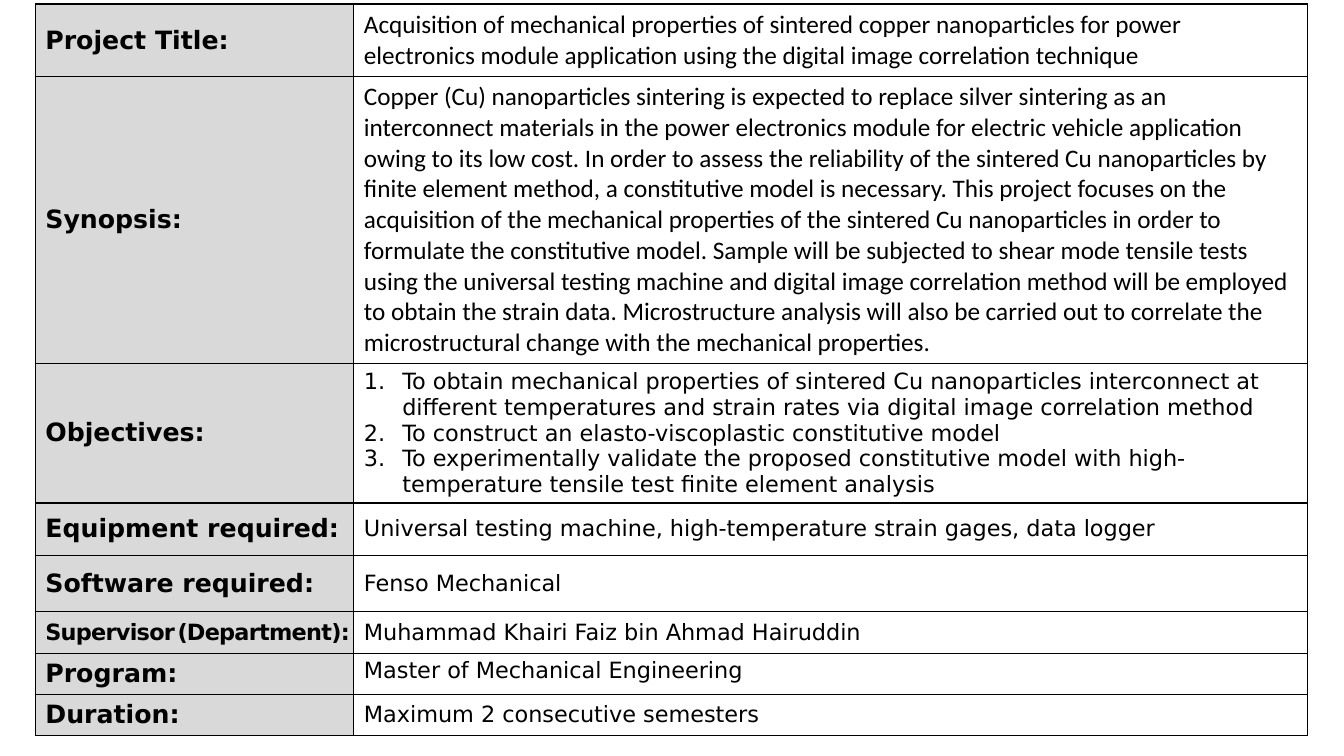
"""Builds a one-slide project proposal sheet as a two-column table."""
from lxml.etree import SubElement as Sub
from pptx import Presentation
from pptx.dml.color import RGBColor as Color
from pptx.enum.text import MSO_ANCHOR as Anchor
from pptx.oxml import parse_xml
from pptx.oxml.ns import nsdecls, qn
from pptx.util import Pt

PX = 9144
THEME = {
    "ink": Color.from_string("000000"), "label": Color.from_string("D9D9D9"),
    "sans": "DejaVu Sans", "body": "Calibri",
    "big": Pt(18), "small": Pt(16), "gap": Pt(5), "edge": Pt(1),
}
LABEL = ("sans", "big", True)
PROSE = ("body", "big", False)
NOTE = ("sans", "small", False)

ROWS = [
    (72, "Project Title:", PROSE, [
        "Acquisition of mechanical properties of sintered copper nanoparticles for power "
        "electronics module application using the digital image correlation technique"]),
    (284, "Synopsis:", PROSE, [
        "Copper (Cu) nanoparticles sintering is expected to replace silver sintering as an "
        "interconnect materials in the power electronics module for electric vehicle application "
        "owing to its low cost. In order to assess the reliability of the sintered Cu nanoparticles by "
        "finite element method, a constitutive model is necessary. This project focuses on the "
        "acquisition of the mechanical properties of the sintered Cu nanoparticles in order to "
        "formulate the constitutive model. Sample will be subjected to shear mode tensile tests "
        "using the universal testing machine and digital image correlation method will be employed "
        "to obtain the strain data. Microstructure analysis will also be carried out to correlate the "
        "microstructural change with the mechanical properties."]),
    (138, "Objectives:", NOTE, [
        "To obtain mechanical properties of sintered Cu nanoparticles interconnect at "
        "different temperatures and strain rates via digital image correlation method",
        "To construct an elasto-viscoplastic constitutive model",
        "To experimentally validate the proposed constitutive model with "
        "high-temperature tensile test finite element analysis"]),
    (52, "Equipment required:", NOTE, [
        "Universal testing machine, high-temperature strain gages, data logger"]),
    (56, "Software required:", NOTE, ["Fenso Mechanical"]),
    (41, "Supervisor (Department):", NOTE, ["Muhammad Khairi Faiz bin Ahmad Hairuddin"]),
    (41, "Program:", NOTE, ["Master of Mechanical Engineering"]),
    (41, "Duration:", NOTE, ["Maximum 2 consecutive semesters"]),
]


def style(para, look):
    """Set face, size, weight and colour on a paragraph."""
    face, size, bold = look
    font = para.font
    font.name, font.size, font.bold = THEME[face], THEME[size], bold
    font.color.rgb = THEME["ink"]


def fill_cell(cell, lines, look):
    """Write the lines into a cell and rule its four sides."""
    cell.vertical_anchor = Anchor.MIDDLE
    frame = cell.text_frame
    frame.text = "\n".join(lines)
    for para in frame.paragraphs:
        style(para, look)
        if len(lines) > 1:
            props = para._p.get_or_add_pPr()
            props.set("marL", str(38 * PX))
            props.set("indent", str(-38 * PX))
            props.insert(0, parse_xml(f'<a:buAutoNum {nsdecls("a")} type="arabicPeriod"/>'))
    props = cell._tc.get_or_add_tcPr()
    for spot, side in enumerate(("lnL", "lnR", "lnT", "lnB")):
        line = parse_xml(f'<a:{side} {nsdecls("a")} w="{THEME["edge"]}"/>')
        ink = Sub(Sub(line, qn("a:solidFill")), qn("a:srgbClr"))
        ink.set("val", str(THEME["ink"]))
        props.insert(spot, line)


deck = Presentation()
deck.slide_width, deck.slide_height = 1333 * PX, 750 * PX
slide = deck.slides.add_slide(deck.slide_layouts[6])
high = sum(row[0] for row in ROWS)
table = slide.shapes.add_table(
    len(ROWS), 2, 35 * PX, 4 * PX, 1262 * PX, high * PX).table
table.first_row = table.horz_banding = False
for col, wide in zip(table.columns, (316, 946)):
    col.width = wide * PX

for spot, (tall, name, look, lines) in enumerate(ROWS):
    table.rows[spot].height = tall * PX
    left, right = table.cell(spot, 0), table.cell(spot, 1)
    fill_cell(left, [name], LABEL)
    fill_cell(right, lines, look)
    left.fill.solid()
    left.fill.fore_color.rgb = THEME["label"]
    right.fill.background()
    if name.startswith("Supervisor"):
        left.margin_right = 0
        para = left.text_frame.paragraphs[0]
        para.clear()
        style(para, ("sans", "small", True))
        for text in name.partition(" "):
            run = para.add_run()
            run.text = text
            run.font.size = THEME["gap" if text == " " else "small"]
            run._r.get_or_add_rPr().set("spc", "-50")
    if name == "Program:":
        right.vertical_anchor = Anchor.TOP

deck.save("out.pptx")
